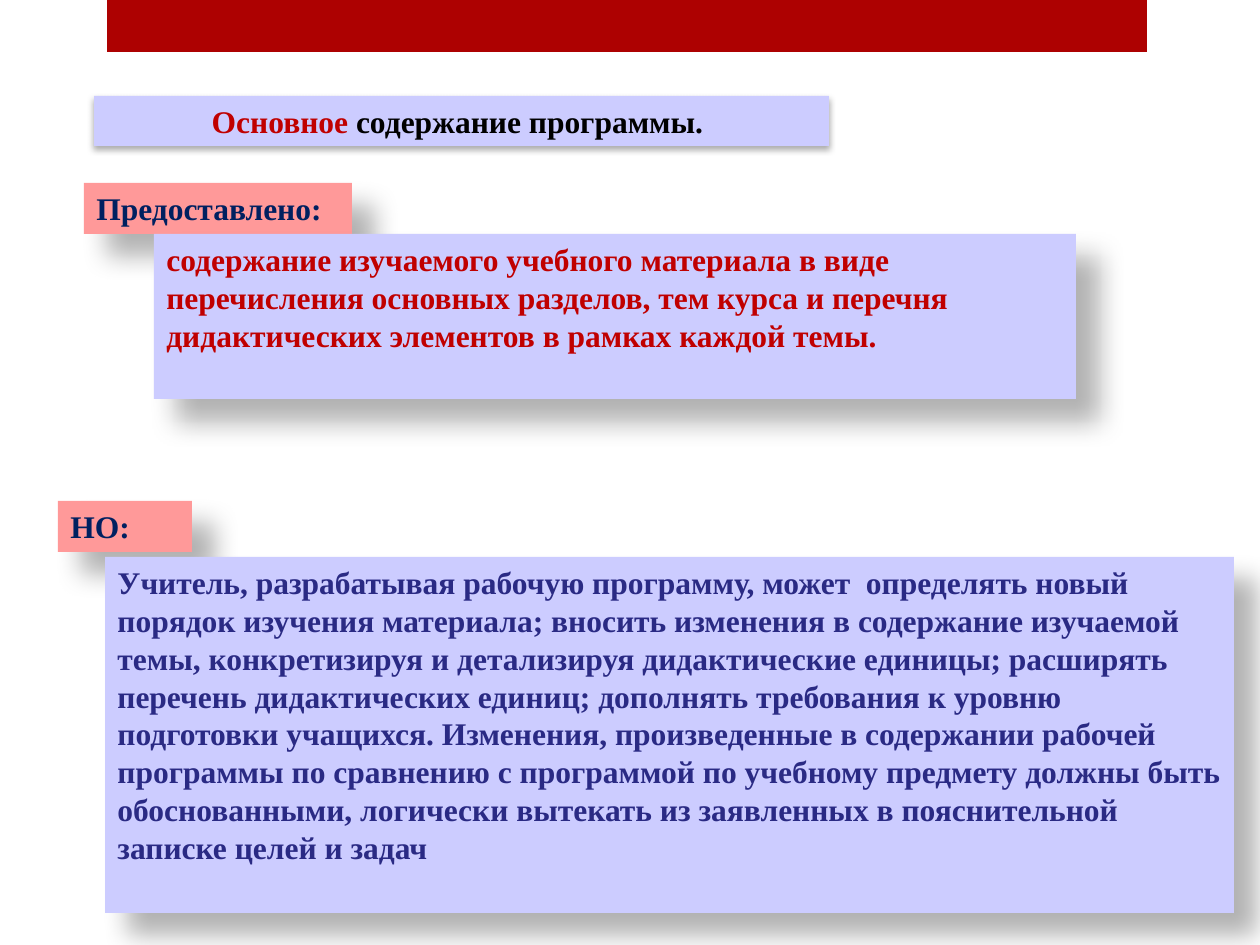
from lxml import etree
from pptx import Presentation
from pptx.dml.color import RGBColor
from pptx.enum.shapes import MSO_SHAPE
from pptx.enum.text import MSO_ANCHOR, MSO_AUTO_SIZE, PP_ALIGN
from pptx.oxml.ns import qn
from pptx.util import Emu, Pt

RECTANGLE = MSO_SHAPE.RECTANGLE
TOP = MSO_ANCHOR.TOP
NO_AUTOFIT = MSO_AUTO_SIZE.NONE
LEFT, CENTER = PP_ALIGN.LEFT, PP_ALIGN.CENTER

EMU_PER_PX = 914400 / 126
TITLE_ONLY_LAYOUT = 5

THEME = {
    "font": "Times New Roman",
    "size": 18,
    "band": "AD0101",
    "panel": "CCCCFF",
    "label": "FF9999",
    "black": "000000",
    "red": "C00000",
    "navy": "002060",
    "indigo": "2A2A84",
    # Shadows: opacity in percent, blur and distance in points, angle in degrees
    "soft_shadow": (32, 3.5, 2.2, 90),
    "deep_shadow": (30, 15, 18, 45),
}


def style_box(shape, bounds, fill, shadow=None):
    """Place a box and give it a fill, no outline and an optional shadow."""
    shape.left, shape.top, shape.width, shape.height = (
        Emu(round(length * EMU_PER_PX)) for length in bounds)
    shape.fill.solid()
    shape.fill.fore_color.rgb = RGBColor.from_string(THEME[fill])
    shape.line.fill.background()
    shape.shadow.inherit = False
    if shadow:
        opacity, blur, distance, angle = THEME[shadow]
        effects = shape._element.spPr.find(qn("a:effectLst"))
        outer = etree.SubElement(
            effects, qn("a:outerShdw"), blurRad=str(Pt(blur)), dist=str(Pt(distance)),
            dir=str(angle * 60000), algn="tl", rotWithShape="0")
        color = etree.SubElement(outer, qn("a:srgbClr"), val=THEME["black"])
        etree.SubElement(color, qn("a:alpha"), val=str(opacity * 1000))


def write_text(shape, *parts, align=LEFT, size=THEME["size"], bold=True):
    """Fill a shape with one paragraph made of (text, colour) parts."""
    frame = shape.text_frame
    frame.word_wrap = True
    frame.auto_size = NO_AUTOFIT
    frame.vertical_anchor = TOP
    paragraph = frame.paragraphs[0]
    paragraph.alignment = align
    for text, color in parts:
        run = paragraph.add_run()
        run.text = text
        run.font.name = THEME["font"]
        run.font.size = Pt(size)
        run.font.bold = bold
        run.font.color.rgb = RGBColor.from_string(THEME[color])


presentation = Presentation()
presentation.slide_width = Emu(round(1260 * EMU_PER_PX))
presentation.slide_height = Emu(round(945 * EMU_PER_PX))
slide = presentation.slides.add_slide(presentation.slide_layouts[TITLE_ONLY_LAYOUT])

# Top band
band = slide.shapes.add_shape(RECTANGLE, 0, 0, 0, 0)
style_box(band, (107, 0, 1040, 52), "band")

# Title
title = slide.shapes.title
style_box(title, (94, 96, 735, 50), "panel", "soft_shadow")
write_text(title, ("Основное", "red"), (" содержание программы. ", "black"), align=CENTER)

# Labels, each followed by its panel
boxes = [
    ((84, 183, 268, 51), "label", "navy", "Предоставлено:"),
    ((154, 234, 922, 165), "panel", "red",
     "содержание изучаемого учебного материала в виде перечисления основных разделов, "
     "тем курса и перечня дидактических элементов в рамках каждой темы."),
    ((58, 501, 134, 51), "label", "navy", "НО:"),
    ((105, 557, 1129, 356), "panel", "indigo",
     "Учитель, разрабатывая рабочую программу, может  определять новый порядок изучения "
     "материала; вносить изменения в содержание изучаемой темы, конкретизируя и "
     "детализируя дидактические единицы; расширять перечень дидактических единиц; "
     "дополнять требования к уровню подготовки учащихся. Изменения, произведенные в "
     "содержании рабочей программы по сравнению с программой по учебному предмету "
     "должны быть обоснованными, логически вытекать из заявленных в пояснительной "
     "записке целей и задач"),
]
for bounds, fill, color, text in boxes:
    box = slide.shapes.add_shape(RECTANGLE, 0, 0, 0, 0)
    style_box(box, bounds, fill, "deep_shadow")
    write_text(box, (text, color))

presentation.save("out.pptx")
